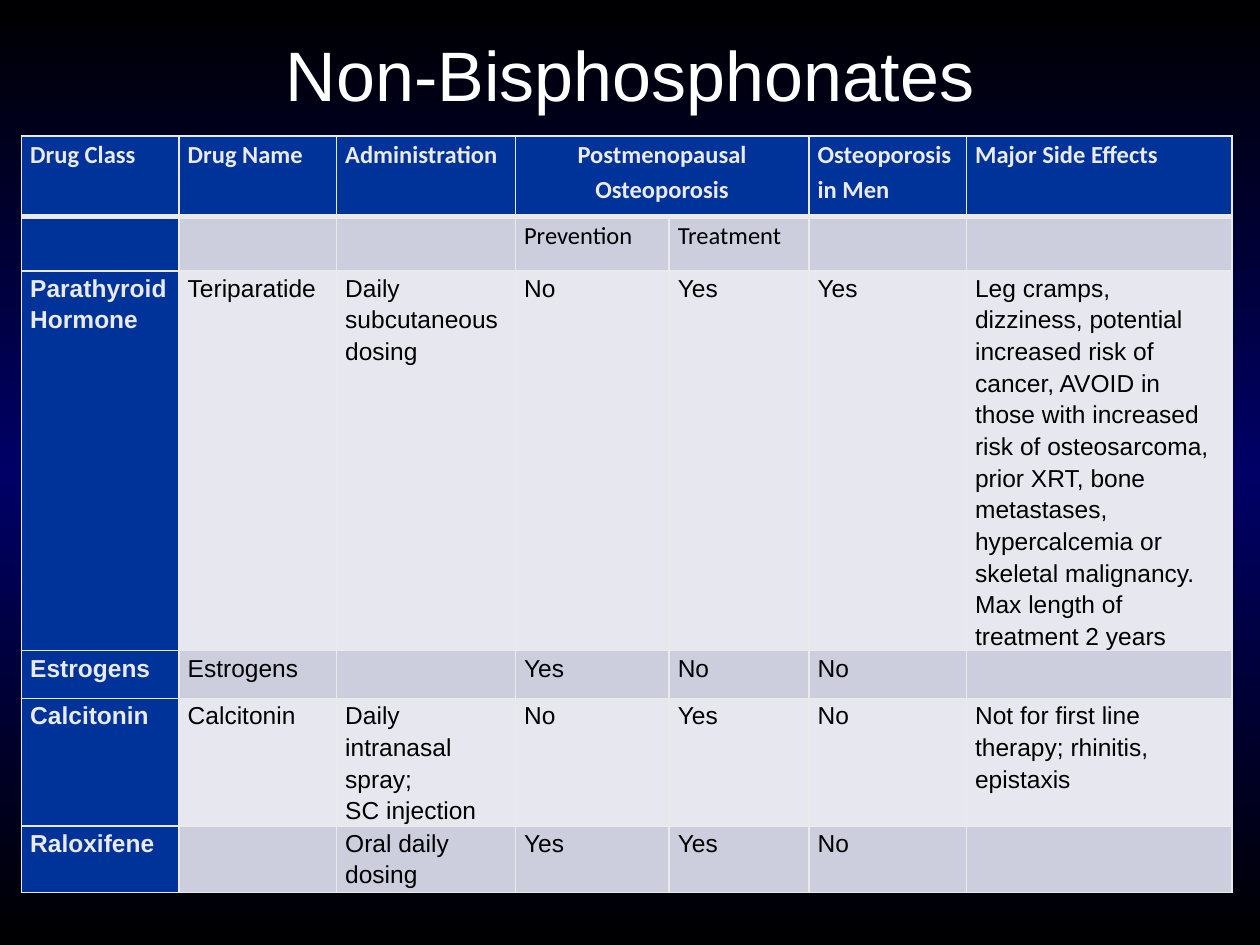
from copy import deepcopy

from lxml import etree
from pptx import Presentation
from pptx.dml.color import RGBColor
from pptx.enum.text import MSO_ANCHOR, PP_ALIGN
from pptx.oxml.ns import qn
from pptx.util import Inches, Pt

CENTER, LEFT = PP_ALIGN.CENTER, PP_ALIGN.LEFT
MIDDLE = MSO_ANCHOR.MIDDLE
TITLE_ONLY = 5

THEME = {
    "background": [(0, "000000"), (0.5, "000066"), (1, "000000")],
    "title": "FFFFFF", "light": "EAEAEA", "dark": "000000",
    "header": "003399", "bands": ("E7E8EF", "CCCEDE"),
    "body_font": "Arial", "header_font": "Calibri",
    "title_size": 40, "table_size": 14,
    "line": 1, "header_line": 3,
}

TITLE = "Non-Bisphosphonates"
ROWS = [
    ["Drug Class", "Drug Name", "Administration", "Postmenopausal Osteoporosis", "",
     "Osteoporosis in Men", "Major Side Effects"],
    ["", "", "", "Prevention", "Treatment", "", ""],
    ["Parathyroid Hormone", "Teriparatide", "Daily subcutaneous dosing", "No", "Yes", "Yes",
     "Leg cramps, dizziness, potential increased risk of cancer, AVOID in those with "
     "increased risk of osteosarcoma, prior XRT, bone metastases, hypercalcemia or "
     "skeletal malignancy. Max length of treatment 2 years"],
    ["Estrogens", "Estrogens", "", "Yes", "No", "No", ""],
    ["Calcitonin", "Calcitonin", "Daily intranasal spray;\nSC injection", "No", "Yes", "No",
     "Not for first line therapy; rhinitis, epistaxis"],
    ["Raloxifene", "", "Oral daily dosing", "Yes", "Yes", "No", ""],
]
COLUMN_WIDTHS = [1.25, 1.25, 1.42, 1.22, 1.11, 1.25, 2.11]
ROW_HEIGHTS = [0.64, 0.43, 2.8, 0.38, 1.01, 0.53]
HEADER_ROWS = 2
SPAN_COLUMN = 3


def paint_background(slide):
    fill = slide.background.fill
    fill.gradient()
    fill.gradient_angle = 90
    stop_list = slide.element.find(".//" + qn("a:gsLst"))
    stop_list.append(deepcopy(stop_list[0]))
    for stop, (position, color) in zip(fill.gradient_stops, THEME["background"]):
        stop.position = position
        stop.color.rgb = RGBColor.from_string(color)


def format_font(font, name, size, color, bold=False):
    font.name, font.size, font.bold = name, Pt(size), bold
    font.color.rgb = RGBColor.from_string(color)


def add_title(slide):
    title = slide.shapes.title
    title.left, title.top = Inches(0.75), Inches(0.17)
    title.width, title.height = Inches(8.5), Inches(0.83)
    frame = title.text_frame
    frame.text = TITLE
    frame.vertical_anchor = MIDDLE
    para = frame.paragraphs[0]
    para.alignment = CENTER
    format_font(para.runs[0].font, THEME["body_font"], THEME["title_size"], THEME["title"])


def add_borders(cell, row):
    properties = cell._tc.get_or_add_tcPr()
    widths = {"lnL": THEME["line"], "lnR": THEME["line"],
              "lnT": THEME["header_line"] if row == 1 else THEME["line"],
              "lnB": THEME["header_line"] if row == 0 else THEME["line"]}
    for side, width in widths.items():
        line = etree.SubElement(properties, qn("a:" + side), w=str(Pt(width)))
        fill = etree.SubElement(line, qn("a:solidFill"))
        etree.SubElement(fill, qn("a:srgbClr"), val=THEME["light"])


def format_cell(cell, text, row, column):
    is_header = row == 0 or column == 0
    cell.margin_left = cell.margin_right = Inches(0.07)
    cell.margin_top = cell.margin_bottom = 0
    add_borders(cell, row)
    cell.fill.solid()
    color = THEME["header"] if is_header else THEME["bands"][row % 2]
    cell.fill.fore_color.rgb = RGBColor.from_string(color)
    cell.text_frame.text = text
    font_name = THEME["header_font"] if row < HEADER_ROWS else THEME["body_font"]
    for para in cell.text_frame.paragraphs:
        para.line_spacing = 1.15
        para.alignment = CENTER if (row, column) == (0, SPAN_COLUMN) else LEFT
        for span in para.runs:
            format_font(span.font, font_name, THEME["table_size"],
                        THEME["light"] if is_header else THEME["dark"], is_header)


def add_drug_table(slide):
    table = slide.shapes.add_table(
        len(ROWS), len(COLUMN_WIDTHS), Inches(0.17), Inches(1.08),
        Inches(sum(COLUMN_WIDTHS)), Inches(sum(ROW_HEIGHTS))).table
    for column, width in zip(table.columns, COLUMN_WIDTHS):
        column.width = Inches(width)
    for row, height in zip(table.rows, ROW_HEIGHTS):
        row.height = Inches(height)
    for row, texts in enumerate(ROWS):
        for column, text in enumerate(texts):
            format_cell(table.cell(row, column), text, row, column)
    table.cell(0, SPAN_COLUMN).merge(table.cell(0, SPAN_COLUMN + 1))


def main():
    deck = Presentation()
    deck.slide_width, deck.slide_height = Inches(10), Inches(7.5)
    slide = deck.slides.add_slide(deck.slide_layouts[TITLE_ONLY])
    paint_background(slide)
    add_title(slide)
    add_drug_table(slide)
    deck.save("out.pptx")


if __name__ == "__main__":
    main()
